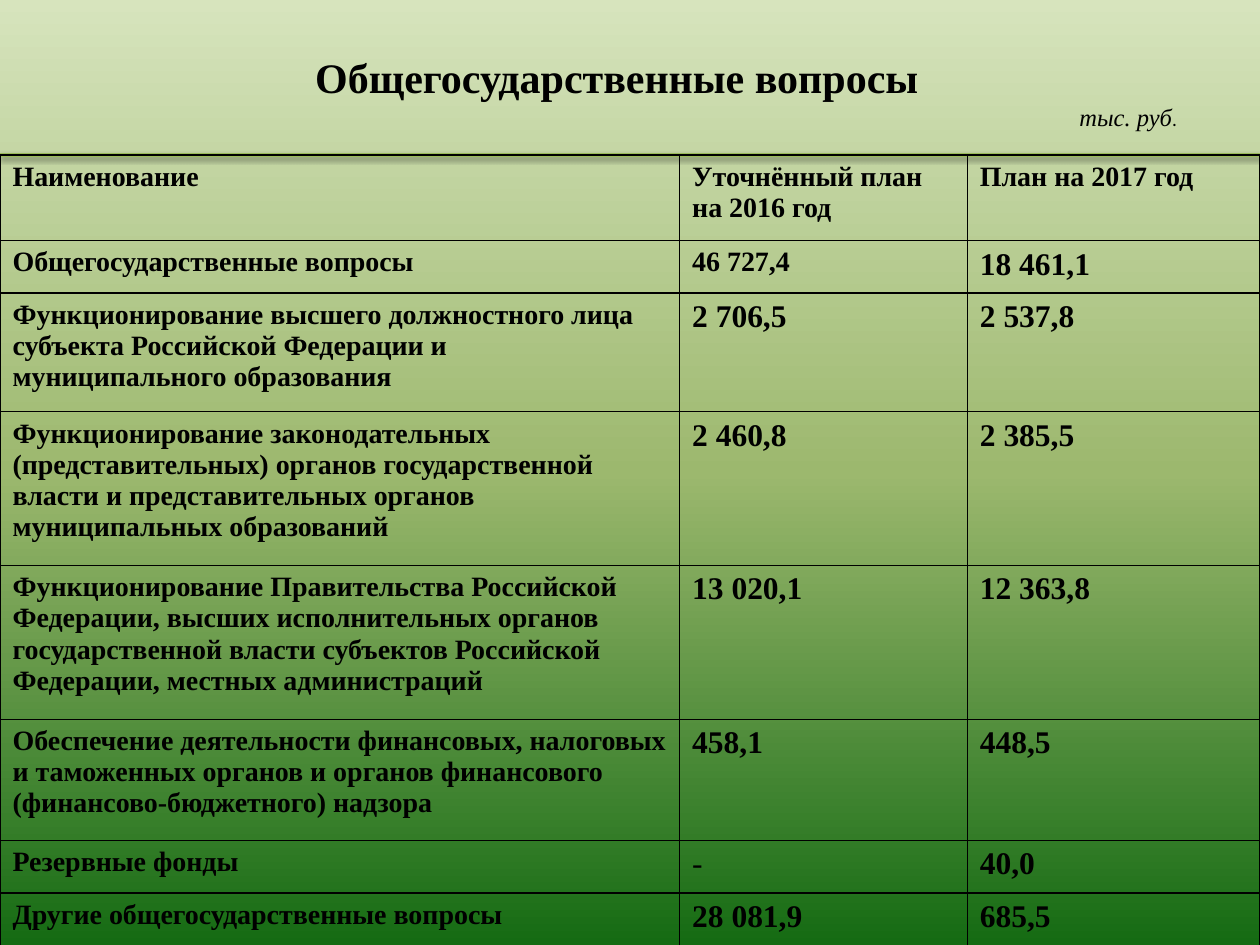
import copy

import pptx
import pptx.dml.color
import pptx.enum.shapes
import pptx.enum.text
import pptx.oxml
import pptx.oxml.ns
import pptx.util
from pptx.dml.color import RGBColor
from pptx.util import Cm, Pt

BLACK = RGBColor(0x00, 0x00, 0x00)
OLIVE = RGBColor(0x9B, 0xBB, 0x59)
BACKGROUND = [
    (0, RGBColor(0xD7, 0xE4, 0xBD)),
    (0.5, RGBColor(0x9C, 0xB8, 0x6E)),
    (1, RGBColor(0x15, 0x6B, 0x13)),
]
SERIF = "Times New Roman"

TABLE_TOP = 3.12
COL_WIDTHS = [13.7, 5.8, 5.9]
ROW_HEIGHTS = [1.73, 1.06, 2.39, 3.1, 3.1, 2.44, 1.06, 1.06]
ROWS = [
    ("Наименование", "Уточнённый план на 2016 год", "План на 2017 год"),
    ("Общегосударственные вопросы", "46 727,4", "18 461,1"),
    ("Функционирование высшего должностного лица субъекта Российской "
     "Федерации и муниципального образования", "2 706,5", "2 537,8"),
    ("Функционирование законодательных (представительных) органов "
     "государственной власти и представительных органов муниципальных "
     "образований", "2 460,8", "2 385,5"),
    ("Функционирование Правительства Российской Федерации, высших "
     "исполнительных органов государственной власти субъектов Российской "
     "Федерации, местных администраций", "13 020,1", "12 363,8"),
    ("Обеспечение деятельности финансовых, налоговых и таможенных органов и "
     "органов финансового (финансово-бюджетного) надзора", "458,1", "448,5"),
    ("Резервные фонды", "-", "40,0"),
    ("Другие общегосударственные вопросы", "28 081,9", "685,5"),
]


def add_run(p, text, size=16, font=SERIF, bold=False, italic=False):
    r = p.add_run()
    r.text = text
    r.font.size, r.font.name = Pt(size), font
    r.font.bold, r.font.italic = bold, italic
    r.font.color.rgb = BLACK


def parse_a(xml):
    """Parse one element of the DrawingML namespace, given without prefix declaration."""
    ns = pptx.oxml.ns.nsdecls("a")
    return pptx.oxml.parse_xml(xml.replace(">", f" {ns}>", 1))


class SlideBuilder:
    def __init__(self, slide):
        self.slide = slide

    def background(self, stops):
        fill = self.slide.background.fill
        fill.gradient()
        fill.gradient_angle = 270
        gs_list = self.slide.element.find(".//" + pptx.oxml.ns.qn("a:gsLst"))
        gs_list.append(copy.deepcopy(gs_list[-1]))
        for stop, (position, color) in zip(fill.gradient_stops, stops):
            stop.position = position
            stop.color.rgb = color

    def title(self, text, x, y, w, h):
        sp = self.slide.shapes.title
        sp.left, sp.top, sp.width, sp.height = Cm(x), Cm(y), Cm(w), Cm(h)
        tf = sp.text_frame
        tf.word_wrap = False
        tf.vertical_anchor = pptx.enum.text.MSO_ANCHOR.TOP
        p = tf.paragraphs[0]
        p.alignment = pptx.enum.text.PP_ALIGN.LEFT
        add_run(p, text, size=24, bold=True)

    def unit_label(self, x, y, w, h):
        tf = self.slide.shapes.add_textbox(Cm(x), Cm(y), Cm(w), Cm(h)).text_frame
        tf.word_wrap = True
        p = tf.paragraphs[0]
        add_run(p, "тыс. руб", size=14, italic=True)
        add_run(p, ".", size=11, font="Calibri")

    def shadowed_rule(self, y, width):
        line = self.slide.shapes.add_connector(
            pptx.enum.shapes.MSO_CONNECTOR.STRAIGHT, Cm(width), Cm(y), Cm(0), Cm(y))
        line.line.color.rgb = OLIVE
        line.line.width = Pt(2)
        line.element.spPr.append(parse_a(
            '<a:effectLst><a:outerShdw blurRad="40000" dist="20000" dir="5400000" '
            'rotWithShape="0"><a:srgbClr val="000000"><a:alpha val="38000"/>'
            '</a:srgbClr></a:outerShdw></a:effectLst>'))

    def cell(self, cell, text, size, bold):
        cell.fill.background()
        tc_pr = cell._tc.get_or_add_tcPr()
        for i, side in enumerate(("lnL", "lnR", "lnT", "lnB")):
            tc_pr.insert(i, parse_a(
                f'<a:{side} w="{Pt(1)}"><a:solidFill><a:srgbClr val="{BLACK}"/>'
                f'</a:solidFill></a:{side}>'))
        add_run(cell.text_frame.paragraphs[0], text, size=size, bold=bold)

    def table(self, rows, y, col_widths, row_heights):
        table = self.slide.shapes.add_table(
            len(rows), len(col_widths), Cm(0), Cm(y),
            Cm(sum(col_widths)), Cm(sum(row_heights))).table
        table.first_row = table.horz_banding = False
        for col, width in zip(table.columns, col_widths):
            col.width = Cm(width)
        for i, (row, height) in enumerate(zip(rows, row_heights)):
            table.rows[i].height = Cm(height)
            for j, text in enumerate(row):
                small = i == 0 or j == 0 or (i, j) == (1, 1)
                self.cell(table.cell(i, j), text, 16 if small else 18, text != "-")


def main():
    prs = pptx.Presentation()
    prs.slide_width, prs.slide_height = Cm(25.4), Cm(19.05)
    s = SlideBuilder(prs.slides.add_slide(prs.slide_layouts[5]))
    s.background(BACKGROUND)
    s.shadowed_rule(TABLE_TOP, sum(COL_WIDTHS))
    s.table(ROWS, TABLE_TOP, COL_WIDTHS, ROW_HEIGHTS)
    s.title("Общегосударственные вопросы", 6.1, 0.91, 12.8, 1.27)
    s.unit_label(21.51, 1.93, 3.6, 1)
    prs.save("out.pptx")


if __name__ == "__main__":
    main()
